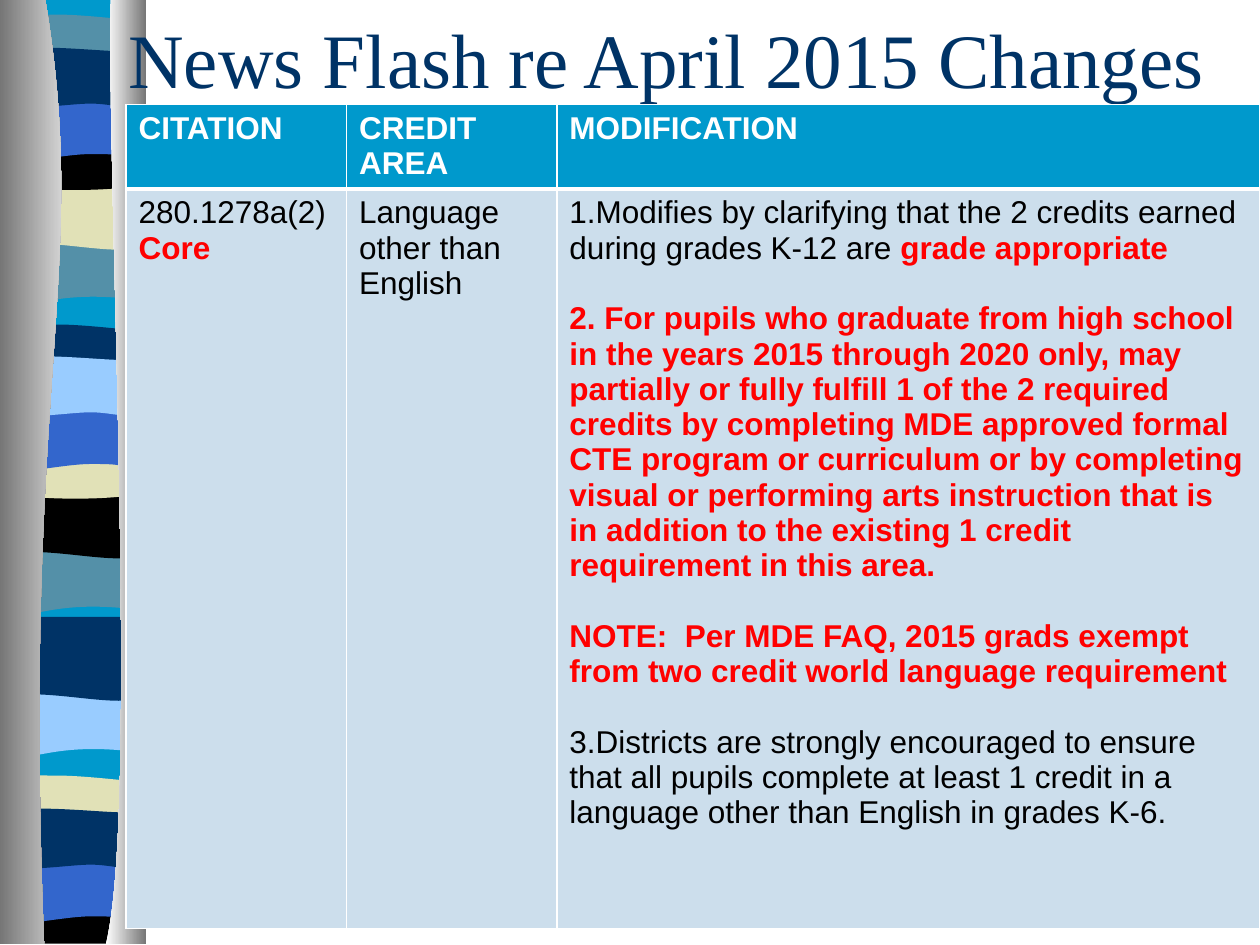
from lxml.etree import SubElement
from pptx import Presentation
from pptx.dml.color import RGBColor
from pptx.enum.text import MSO_ANCHOR
from pptx.oxml.ns import qn
from pptx.util import Cm, Pt

TITLE = "News Flash re April 2015 Changes"
NAVY, TEAL, SKY = "003366", "5490A8", "99CCFF"
BLUE, CYAN, SAND = "3366CC", "0099CC", "E1E1B7"
BLACK, WHITE, RED, GREY, PALE = "000000", "FFFFFF", "FF0000", "767676", "CCDEEC"

# Table: cells hold paragraphs, paragraphs hold (text, colour, bold) spans
COLUMNS = [1.75, 1.67, 5.58]
ROWS = [0.67, 5.87]
HEADINGS = ["CITATION", "CREDIT AREA", "MODIFICATION"]
DETAILS = [
    [[("280.1278a(2)", BLACK, False)], [("Core", RED, True)]],
    [[("Language other than English", BLACK, False)]],
    [
        [("1.Modifies by clarifying that the 2 credits earned during grades K-12 are ",
          BLACK, False), ("grade appropriate", RED, True)],
        [("2. For pupils who graduate from high school in the years 2015 through 2020 "
          "only, may partially or fully fulfill 1 of the 2 required credits by "
          "completing MDE approved formal CTE program or curriculum or by completing "
          "visual or performing arts instruction that is in addition to the existing "
          "1 credit requirement in this area.", RED, True)],
        [("NOTE:  Per MDE FAQ, 2015 grads exempt from two credit world language "
          "requirement", RED, True)],
        [("3.Districts are strongly encouraged to ensure that all pupils complete at "
          "least 1 credit in a language other than English in grades K-6.",
          BLACK, False)],
    ],
]

# Band outlines in inches below the band's top; 2 numbers = line, 6 = curve
LEFT, RIGHT = 0.05, 1.14
STRETCH = 1.34  # wavy bands overlap: each grows in height about its middle
MOTIFS = {
    "swell": [(RIGHT, 0), (RIGHT, 0.47), (0.39, 0.39, 0.24, 0.55, LEFT, 0.47), (LEFT, 0)],
    "sag": [(RIGHT, 0), (RIGHT, 0.47), (0.96, 0.55, 0.39, 0.42, LEFT, 0.47), (LEFT, 0)],
    "narrow": [(RIGHT, 0), (RIGHT, 0.24), (0.96, 0.29, 0.24, 0.29, LEFT, 0.24), (LEFT, 0),
               (0.12, -0.05, 0.29, -0.04, 0.47, -0.04), (0.65, -0.04, 1, -0.01, RIGHT, 0)],
    "dip": [(RIGHT, 0), (RIGHT, 0.33), (0.96, 0.38, 0.24, 0.38, LEFT, 0.33), (LEFT, 0),
            (0.72, 0.05, 0.91, 0, RIGHT, 0)],
    "base": [(RIGHT, 0), (RIGHT, 0.37), (LEFT, 0.37), (LEFT, 0),
             (0.72, 0.05, 0.91, 0, RIGHT, 0)],
    "arch": [(RIGHT, 0), (RIGHT, 0.47), (0.97, 0.42, 0.9, 0.42, 0.72, 0.42),
             (0.54, 0.42, 0.22, 0.47, LEFT, 0.47), (LEFT, 0)],
    "ribbon": [(RIGHT, 0), (RIGHT, 0.31), (1.07, 0.36, 0.9, 0.31, 0.72, 0.31),
               (0.54, 0.31, 0.17, 0.36, LEFT, 0.31), (LEFT, 0),
               (0.21, -0.05, 0.79, 0, 0.97, 0)],
    "backdrop": [(RIGHT, 0), (RIGHT, 7.47), (LEFT, 7.47), (LEFT, 0)],
}
BANDS = [
    ("backdrop", 0, CYAN),
    ("swell", 1.85, TEAL), ("sag", 1.41, SAND), ("narrow", 0.21, TEAL),
    ("dip", 1.08, BLACK), ("arch", 0.74, BLUE), ("ribbon", 0.46, NAVY),
    ("swell", 4.31, TEAL), ("sag", 3.86, BLACK), ("narrow", 2.67, NAVY),
    ("dip", 3.53, SAND), ("arch", 3.2, BLUE), ("ribbon", 2.91, SKY),
    ("swell", 5.44, SKY), ("sag", 4.99, NAVY), ("narrow", 6.25, SAND),
    ("base", 7.12, BLACK), ("arch", 6.79, BLUE), ("ribbon", 6.5, NAVY),
]
# Shaded edges: outline, colour at left, colour at right
EDGES = [
    ([(0.36, 0), (0.72, 2.16, 0.17, 2.96, 0.35, 7.49), (0, 7.49), (0, 0)], GREY, WHITE),
    ([(0.88, 0), (0.84, 1.25, 1.11, 6.46, 0.84, 7.49), (1.16, 7.49), (1.16, 0)],
     WHITE, GREY),
]


def inches(value):
    return Cm(value * 2.54)


def colour(code):
    return RGBColor.from_string(code)


def draw(page, outline, top=0, stretch=1):
    heights = [y for part in outline for y in part[1::2]]
    middle = (min(heights) + max(heights)) / 2
    points = [(inches(x), inches(top + middle + (y - middle) * stretch))
              for part in outline for x, y in zip(part[::2], part[1::2])]
    builder = page.shapes.build_freeform(*points[0], scale=1.0)
    builder.add_line_segments(points[1:], close=True)
    shape = builder.convert_to_shape()
    shape.shadow.inherit = False
    shape.line.fill.background()
    # Join each three points of a curve into one Bezier segment
    lines = iter(list(shape._element.iter(qn("a:lnTo"))))
    for part in outline[1:]:
        segment = next(lines)
        if len(part) == 6:
            segment.tag = qn("a:cubicBezTo")
            for _ in range(2):
                extra = next(lines)
                segment.append(extra[0])
                extra.getparent().remove(extra)
    return shape


def style(span, size, font, code, bold=False):
    span.font.size, span.font.name, span.font.bold = Pt(size), font, bold
    span.font.color.rgb = colour(code)


def set_border(cell, side, width):
    line = SubElement(cell._tc.get_or_add_tcPr(), qn(f"a:ln{side}"), w=str(Pt(width)))
    SubElement(SubElement(line, qn("a:solidFill")), qn("a:srgbClr"), val=WHITE)


def fill_cell(cell, paragraphs, background, bottom, gap):
    for side, width in zip("LRTB", (1, 1, 1, bottom)):
        set_border(cell, side, width)
    cell.margin_bottom = Cm(0.05)
    cell.fill.solid()
    cell.fill.fore_color.rgb = colour(background)
    frame = cell.text_frame
    for index, spans in enumerate(paragraphs):
        para = frame.add_paragraph() if index else frame.paragraphs[0]
        if index:
            para.space_before = Pt(gap)
        for text, code, bold in spans:
            span = para.add_run()
            span.text = text
            style(span, 18, "Arial", code, bold)


deck = Presentation()
deck.slide_width, deck.slide_height = inches(10), inches(7.5)
page = deck.slides.add_slide(deck.slide_layouts[6])

# Wavy ribbon on the left
for motif, top, code in BANDS:
    stretch = 1 if motif in ("backdrop", "base") else STRETCH
    band = draw(page, MOTIFS[motif], top, stretch)
    band.fill.solid()
    band.fill.fore_color.rgb = colour(code)
for outline, *shades in EDGES:
    edge = draw(page, outline)
    edge.fill.gradient()
    edge.fill.gradient_angle = 0
    for stop, code in zip(edge.fill.gradient_stops, shades):
        stop.color.rgb = colour(code)

# Title
box = page.shapes.add_textbox(inches(0.92), 0, inches(9.08), inches(0.92))
box.text_frame.word_wrap = True
box.text_frame.vertical_anchor = MSO_ANCHOR.MIDDLE
box.text_frame.text = TITLE
style(box.text_frame.paragraphs[0].runs[0], 44, "Times New Roman", NAVY)

# Table
table = page.shapes.add_table(len(ROWS), len(COLUMNS), inches(1), inches(0.83),
                              inches(sum(COLUMNS)), inches(sum(ROWS))).table
for row, height in zip(table.rows, ROWS):
    row.height = inches(height)
for index, width in enumerate(COLUMNS):
    table.columns[index].width = inches(width)
    heading = [[(HEADINGS[index], WHITE, True)]]
    fill_cell(table.cell(0, index), heading, CYAN, 3, 0)
    # The long last column separates its paragraphs by one line
    gap = 20.2 if index == 2 else 0
    fill_cell(table.cell(1, index), DETAILS[index], PALE, 1, gap)

deck.save("out.pptx")
